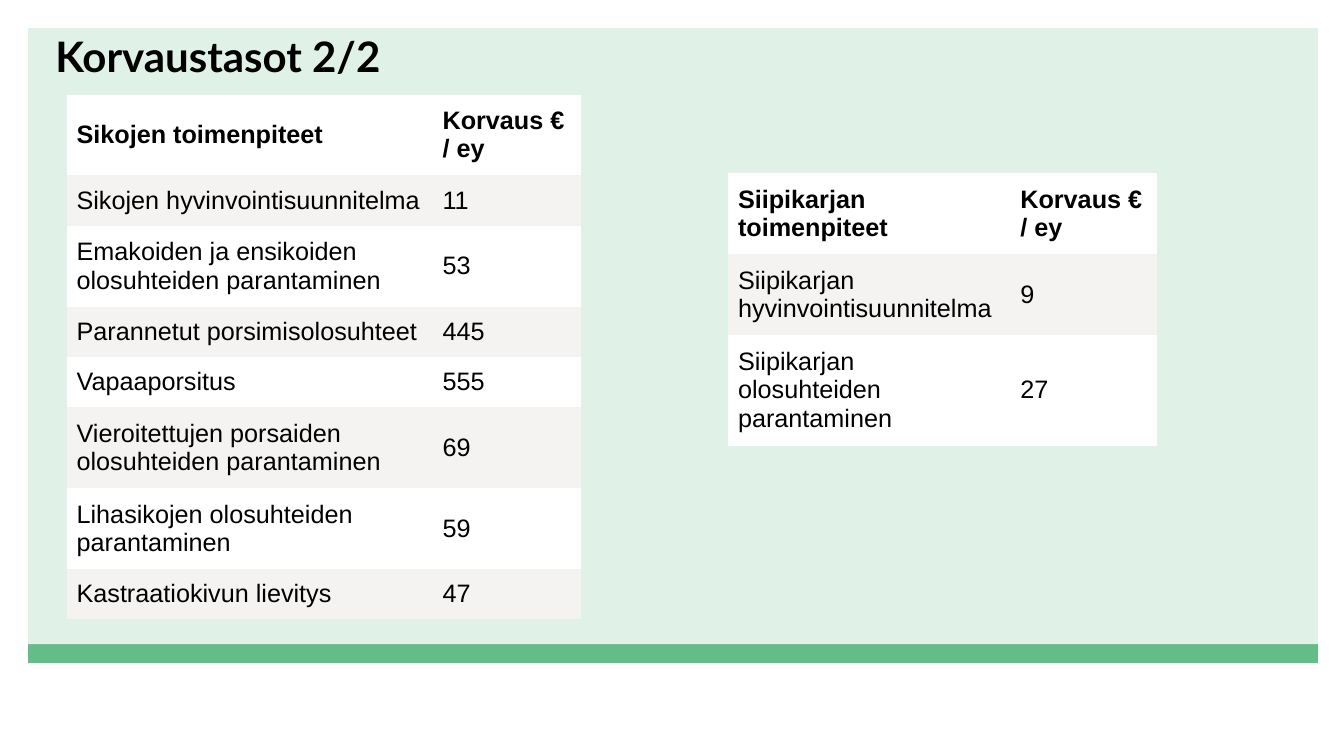
from pptx import Presentation
from pptx.dml.color import RGBColor
from pptx.enum.shapes import MSO_SHAPE
from pptx.enum.text import MSO_ANCHOR
from pptx.oxml.ns import qn
from pptx.util import Pt

PX = 9144  # EMU per px, 100 px to the inch
RECTANGLE = MSO_SHAPE.RECTANGLE
TOP, MIDDLE = MSO_ANCHOR.TOP, MSO_ANCHOR.MIDDLE
NO_STYLE_NO_GRID = "{2D5ABB26-0587-4C30-8999-92F81FD0307C}"
WHITE, BAND = "FFFFFF", "F4F3F2"
ROW_HEIGHTS = {1: 49, 2: 77, 3: 104}  # by number of text lines


def paint(fill, color):
    fill.solid()
    fill.fore_color.rgb = RGBColor.from_string(color)


def style_font(paragraph, name, size, bold):
    font = paragraph.font
    font.name, font.size, font.bold = name, Pt(size), bold
    paint(font.fill, "000000")


prs = Presentation()
prs.slide_width, prs.slide_height = 1333 * PX, 750 * PX
slide = prs.slides.add_slide(prs.slide_layouts[6])

# Green panel with a darker strip below it
for top, height, color in [(638, 20, "63BD88"), (28, 611, "E0F2E7")]:
    panel = slide.shapes.add_shape(RECTANGLE, 28 * PX, top * PX, 1279 * PX, height * PX)
    panel.shadow.inherit = False
    paint(panel.fill, color)
    panel.line.fill.background()

title = slide.shapes.add_textbox(45 * PX, 31 * PX, 1177 * PX, 63 * PX).text_frame
title.word_wrap = True
title.vertical_anchor = TOP
title.text = "Korvaustasot 2/2"
title.paragraphs[0].line_spacing = 0.9
style_font(title.paragraphs[0], "Lato", 30, True)

# Each row: measure, payment, number of text lines
pig_rows = [
    ("Sikojen toimenpiteet", "Korvaus € / ey", 2),
    ("Sikojen hyvinvointisuunnitelma", "11", 1),
    ("Emakoiden ja ensikoiden olosuhteiden parantaminen", "53", 2),
    ("Parannetut porsimisolosuhteet", "445", 1),
    ("Vapaaporsitus", "555", 1),
    ("Vieroitettujen porsaiden olosuhteiden parantaminen", "69", 2),
    ("Lihasikojen olosuhteiden parantaminen", "59", 2),
    ("Kastraatiokivun lievitys", "47", 1),
]
poultry_rows = [
    ("Siipikarjan toimenpiteet", "Korvaus € / ey", 2),
    ("Siipikarjan hyvinvointisuunnitelma", "9", 2),
    ("Siipikarjan olosuhteiden parantaminen", "27", 3),
]

for left, top, widths, rows in [
    (66, 94, (363, 147), pig_rows),
    (722, 172, (280, 146), poultry_rows),
]:
    heights = [ROW_HEIGHTS[lines] for _, _, lines in rows]
    payments = slide.shapes.add_table(
        len(rows), 2, left * PX, top * PX, sum(widths) * PX, sum(heights) * PX
    ).table
    payments._tbl.tblPr.find(qn("a:tableStyleId")).text = NO_STYLE_NO_GRID
    for column, width in zip(payments.columns, widths):
        column.width = width * PX
    for r, (measure, payment, _) in enumerate(rows):
        payments.rows[r].height = heights[r] * PX
        for c, text in enumerate((measure, payment)):
            cell = payments.cell(r, c)
            cell.text = text
            cell.vertical_anchor = MIDDLE
            cell.margin_left = cell.margin_right = 10 * PX
            cell.margin_top = cell.margin_bottom = 10 * PX
            paint(cell.fill, BAND if r % 2 else WHITE)
            style_font(cell.text_frame.paragraphs[0], "Arial", 18, r == 0)

prs.save("out.pptx")
